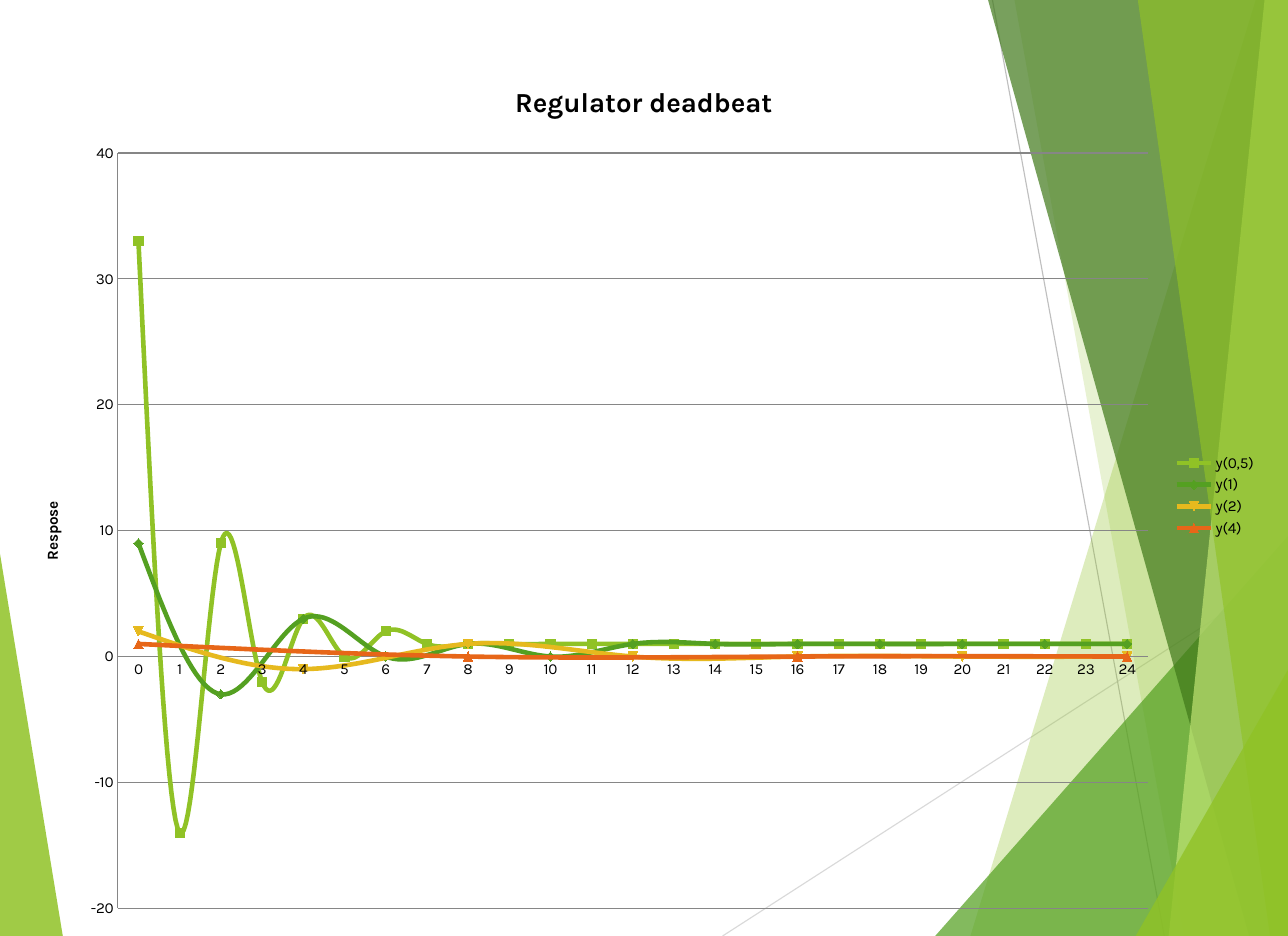
"""Build the deadbeat regulator response chart slide."""
from lxml import etree
from pptx import Presentation
from pptx.chart.data import CategoryChartData
from pptx.dml.color import RGBColor
from pptx.enum.chart import XL_CHART_TYPE, XL_LEGEND_POSITION, XL_TICK_MARK
from pptx.enum.shapes import MSO_CONNECTOR
from pptx.oxml.ns import qn
from pptx.util import Inches, Mm, Pt

LINE_MARKERS = XL_CHART_TYPE.LINE_MARKERS
LEGEND_RIGHT = XL_LEGEND_POSITION.RIGHT
NO_TICK = XL_TICK_MARK.NONE
STRAIGHT = MSO_CONNECTOR.STRAIGHT

BLACK = RGBColor(0x00, 0x00, 0x00)
LIME = RGBColor(0x90, 0xC2, 0x26)
GREEN = RGBColor(0x54, 0xA0, 0x21)
FOREST = RGBColor(0x3F, 0x78, 0x19)
PALE_LIME = RGBColor(0xC0, 0xE4, 0x74)
YELLOW = RGBColor(0xE6, 0xB9, 0x1E)
ORANGE = RGBColor(0xE7, 0x66, 0x18)
AXIS_GRAY = RGBColor(0x86, 0x86, 0x86)
MID_GRAY = RGBColor(0xBF, 0xBF, 0xBF)
LIGHT_GRAY = RGBColor(0xD9, 0xD9, 0xD9)

PAGE_WIDTH = Mm(297)
RIGHT, BOTTOM = 11.7, 8.5
LAST_STEP = 24
LEFT_FACET = ([(-0.01, 4.97), (0.57, BOTTOM), (-0.01, BOTTOM)], LIME, 85)
RAYS = [((6.56, BOTTOM), (11.71, 5.18), LIGHT_GRAY),
        ((9.01, 0), (10.57, BOTTOM), MID_GRAY)]
RIGHT_FACETS = [
    (11.4, 0, 8.81, LIME, 30),
    (9.21, 0, 10.75, LIME, 20),
    (RIGHT, 4.86, 8.49, GREEN, 72),
    (8.97, 0, 11.34, FOREST, 70),
    (11.48, 0, 10.61, PALE_LIME, 70),
    (10.33, 0, 11.53, LIME, 65),
    (RIGHT, 6.07, 10.31, LIME, 80),
]
RESPONSES = [
    ("y(0,5)", 1, [33, -14, 9, -2, 3, 0, 2] + [1] * 18, LIME),
    ("y(1)", 2, [9, -3, 3, 0, 1, 0] + [1] * 7, GREEN),
    ("y(2)", 4, [2, -1, 1, 0, 0, 0, 0], YELLOW),
    ("y(4)", 8, [1, 0, 0, 0], ORANGE),
]
CHART_BOX = (0.18, 0.5, 11.33, 8)
PLOT_BOX = {"x": 0.89, "y": 0.89, "w": 9.35, "h": 6.86}


class SlideBuilder:
    """Hold the text style and current page and draw its elements."""

    def __init__(self, page, font_name):
        self.page = page
        self.font_name = font_name

    def apply(self, target, **values):
        for name, value in values.items():
            setattr(target, name, value)

    def style_font(self, font, size, bold=False):
        self.apply(font, name=self.font_name, size=Pt(size), bold=bold)
        font.color.rgb = BLACK

    def style_line(self, line, color, width):
        line.color.rgb = color
        line.width = Pt(width)

    def facet(self, points, color, opacity):
        corners = [(Inches(x), Inches(y)) for x, y in points]
        builder = self.page.shapes.build_freeform(*corners[0])
        builder.add_line_segments(corners[1:], close=True)
        shape = builder.convert_to_shape()
        shape.shadow.inherit = False
        shape.fill.solid()
        shape.fill.fore_color.rgb = color
        shape.line.fill.background()
        color_node = shape._element.spPr.find(f"{qn('a:solidFill')}/{qn('a:srgbClr')}")
        etree.SubElement(color_node, qn("a:alpha"), val=str(opacity * 1000))

    def ray(self, start, end, color):
        ends = [Inches(value) for value in (*start, *end)]
        connector = self.page.shapes.add_connector(STRAIGHT, *ends)
        self.style_line(connector.line, color, 0.75)
        etree.SubElement(connector._element.spPr, qn("a:effectLst"))

    def title(self, owner, text, size):
        frame = owner.text_frame
        frame.text = text
        self.style_font(frame.paragraphs[0].runs[0].font, size, True)

    def axis(self, axis, **values):
        self.apply(axis, major_tick_mark=NO_TICK, minor_tick_mark=NO_TICK, **values)
        self.style_line(axis.format.line, AXIS_GRAY, 0.75)
        self.style_font(axis.tick_labels.font, 10)

    def place_plot(self, chart, width, height):
        plot_area = chart._chartSpace.chart.plotArea
        for old_layout in plot_area.findall(qn("c:layout")):
            plot_area.remove(old_layout)
        layout = etree.Element(qn("c:layout"))
        plot_area.insert(0, layout)
        manual = etree.SubElement(layout, qn("c:manualLayout"))
        settings = {"layoutTarget": "inner", "xMode": "edge", "yMode": "edge"}
        for name, length in PLOT_BOX.items():
            settings[name] = length / (width if name in "xw" else height)
        for name, value in settings.items():
            etree.SubElement(manual, qn(f"c:{name}"), val=str(value))

    def response_chart(self, left, top, width, height):
        data = CategoryChartData()
        data.categories = [str(step) for step in range(LAST_STEP + 1)]
        for name, interval, samples, _ in RESPONSES:
            values = [None] * (LAST_STEP + 1)
            values[::interval] = samples
            data.add_series(name, values)
        box = [Inches(value) for value in (left, top, width, height)]
        chart = self.page.shapes.add_chart(LINE_MARKERS, *box, data).chart
        self.style_font(chart.font, 10)
        self.apply(chart, has_title=True, has_legend=True)
        self.title(chart.chart_title, "Regulator deadbeat", 18)
        self.apply(chart.legend, position=LEGEND_RIGHT, include_in_layout=False)
        self.style_font(chart.legend.font, 10)
        self.axis(chart.category_axis, has_major_gridlines=False)
        self.axis(chart.value_axis, has_major_gridlines=True, has_title=True,
                  minimum_scale=-20, maximum_scale=40, major_unit=10)
        self.style_line(chart.value_axis.major_gridlines.format.line, AXIS_GRAY, 0.75)
        self.title(chart.value_axis.axis_title, "Respose", 10)
        chart.plots[0].vary_by_categories = False
        for series, (*_, color) in zip(chart.plots[0].series, RESPONSES):
            series.smooth = True
            self.style_line(series.format.line, color, 3)
            series.marker.size = 6
            series.marker.format.fill.solid()
            series.marker.format.fill.fore_color.rgb = color
            self.style_line(series.marker.format.line, color, 0.75)
        self.place_plot(chart, width, height)
        chart._chartSpace.chart.find(qn("c:dispBlanksAs")).set("val", "span")


def main():
    deck = Presentation()
    deck.slide_width, deck.slide_height = PAGE_WIDTH, Inches(BOTTOM)
    page = deck.slides.add_slide(deck.slide_layouts[6])
    builder = SlideBuilder(page, "Karla")
    builder.facet(*LEFT_FACET)
    for start, end, color in RAYS:
        builder.ray(start, end, color)
    for top_x, top_y, bottom_x, color, opacity in RIGHT_FACETS:
        points = [(top_x, top_y), (bottom_x, BOTTOM), (RIGHT, BOTTOM)]
        if top_x < RIGHT:
            points.append((RIGHT, top_y))
        builder.facet(points, color, opacity)
    builder.response_chart(*CHART_BOX)
    deck.save("out.pptx")


if __name__ == "__main__":
    main()
